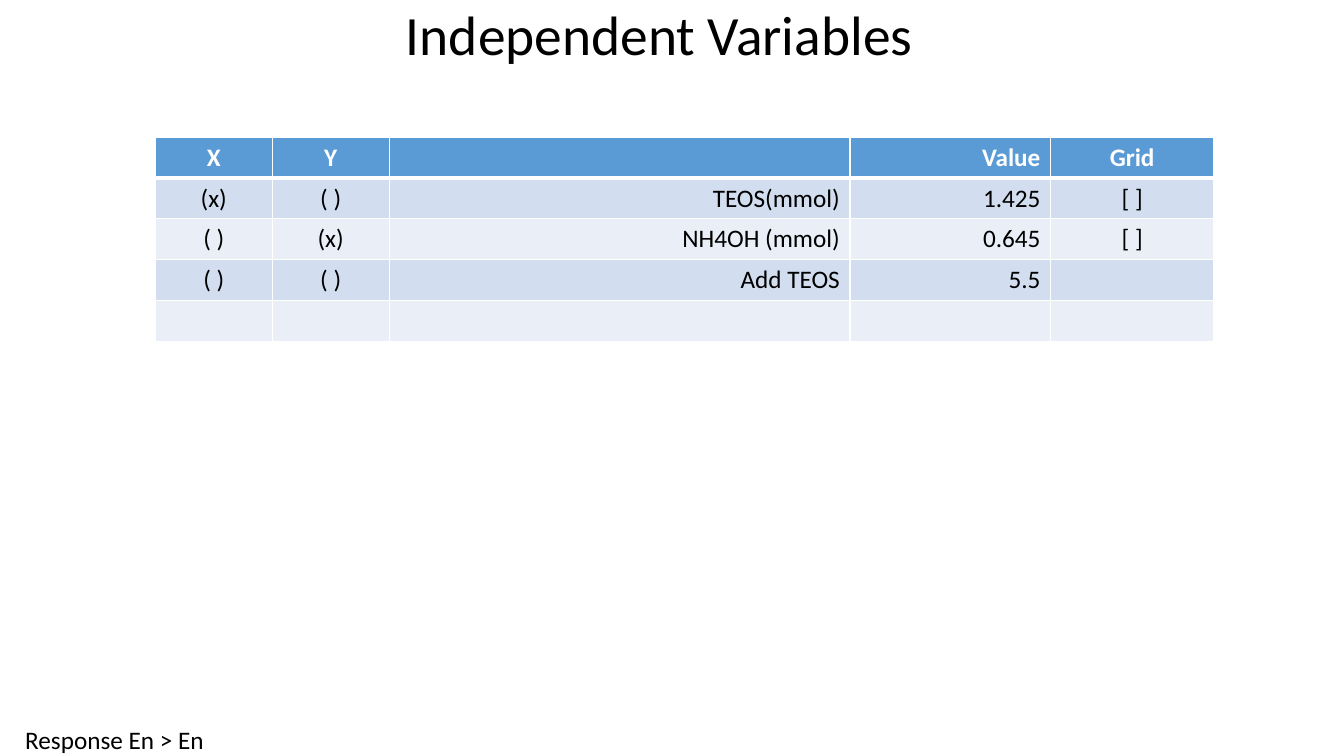
from lxml import etree
from pptx import Presentation
from pptx.dml.color import RGBColor
from pptx.enum import text
from pptx.oxml import ns
from pptx.util import Inches, Pt

BLACK = RGBColor(0x00, 0x00, 0x00)
WHITE = RGBColor(0xFF, 0xFF, 0xFF)
BLUE = RGBColor(0x5B, 0x9B, 0xD5)
BANDS = [RGBColor(0xEA, 0xEF, 0xF7), RGBColor(0xD2, 0xDE, 0xEF)]
CENTER, RIGHT = text.PP_ALIGN.CENTER, text.PP_ALIGN.RIGHT


def style(par, size, color, bold=False):
    for run in par.runs:
        run.font.name = "Calibri"
        run.font.size = Pt(size)
        run.font.color.rgb = color
        run.font.bold = bold


def edge(cell, side, width):
    """Add a white border to one side (L, R, T or B) of a cell."""
    props = cell._tc.get_or_add_tcPr()
    line = etree.SubElement(props, ns.qn(f"a:ln{side}"), w=str(Pt(width)))
    fill = etree.SubElement(line, ns.qn("a:solidFill"))
    etree.SubElement(fill, ns.qn("a:srgbClr"), val=str(WHITE))


prs = Presentation()
prs.slide_width, prs.slide_height = Inches(13.33), Inches(7.5)
slide = prs.slides.add_slide(prs.slide_layouts[6])

# Footer
box = slide.shapes.add_textbox(Inches(0.25), Inches(7.19), Inches(1.78), Inches(0.31))
frame = box.text_frame
frame.margin_left = frame.margin_right = frame.margin_top = frame.margin_bottom = 0
frame.word_wrap = False
frame.auto_size = text.MSO_AUTO_SIZE.SHAPE_TO_FIT_TEXT
frame.text = "Response En > En"
style(frame.paragraphs[0], 18, BLACK)

# Title
title = slide.shapes.add_textbox(0, 0, Inches(13.08), Inches(0.75))
frame = title.text_frame
frame.word_wrap = True
frame.vertical_anchor = text.MSO_ANCHOR.MIDDLE
frame.text = "Independent Variables"
par = frame.paragraphs[0]
par.alignment = CENTER
par.line_spacing = 0.9
style(par, 39.6, BLACK)

# Table of variables
rows = [
    ["X", "Y", "", "Value", "Grid"],
    ["(x)", "( )", "TEOS(mmol)", "1.425", "[ ]"],
    ["( )", "(x)", "NH4OH (mmol)", "0.645", "[ ]"],
    ["( )", "( )", "Add TEOS", "5.5", ""],
    [""] * 5,
]
widths = [1.16, 1.16, 4.57, 1.99, 1.62]
aligns = [CENTER, CENTER, RIGHT, RIGHT, CENTER]
table = slide.shapes.add_table(
    len(rows), len(widths), Inches(1.54), Inches(1.36), Inches(10.49), Inches(2.03)
).table
for col, width in zip(table.columns, widths):
    col.width = Inches(width)

for r, row in enumerate(rows):
    head = r == 0
    for c, word in enumerate(row):
        cell = table.cell(r, c)
        for side in "LRTB":
            thick = (head and side == "B") or (r == 1 and side == "T")
            edge(cell, side, 3 if thick else 1)
        cell.fill.solid()
        cell.fill.fore_color.rgb = BLUE if head else BANDS[r % 2]
        cell.text_frame.text = word
        par = cell.text_frame.paragraphs[0]
        par.alignment = aligns[c]
        style(par, 18, WHITE if head else BLACK, head)

prs.save("out.pptx")
